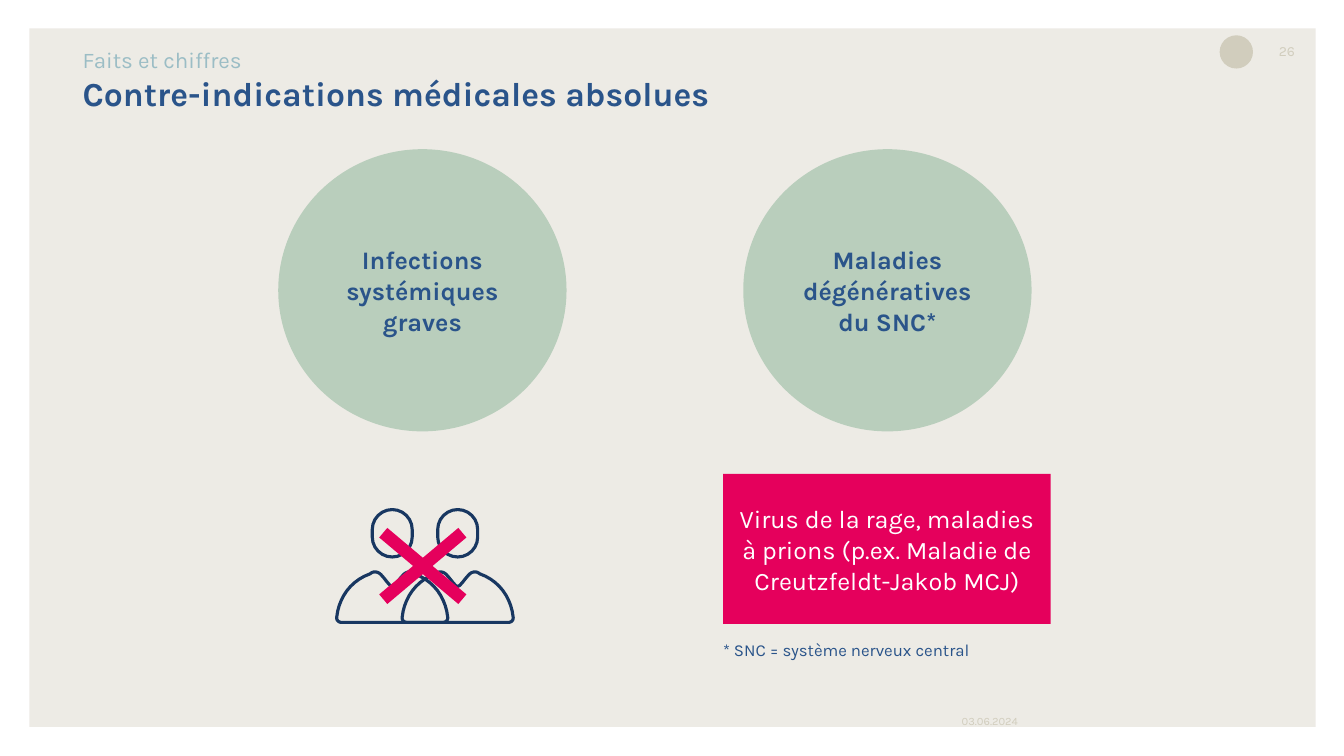
from pptx import Presentation
from pptx.dml.color import RGBColor
from pptx.enum.shapes import MSO_SHAPE as Kind
from pptx.enum.text import MSO_ANCHOR as Anchor, MSO_AUTO_SIZE as Fit, PP_ALIGN as Align
from pptx.util import Inches, Pt

BLUE, NAVY, TEAL = "2A548A", "183761", "9BBDC5"
GREEN, PINK, WHITE = "B9CEBC", "E5005C", "FFFFFF"
SAND, TAUPE = "EDEBE5", "D1CDBD"

# Right half of a bust, from the base to the neckline: the start, then
# Bézier curves, as (shares of the half width, shares of the height).
BASE = (0.91, 1)
CURVES = [
    [(0.97, 1), (1.01, 0.98), (1, 0.95)],
    [(0.96, 0.78), (0.75, 0.63), (0.4, 0.57)],
    [(0.33, 0.54), (0.24, 0.55), (0.18, 0.59)],
    [(0.14, 0.61), (0.1, 0.64), (0.06, 0.66)],
    [(0.03, 0.68), (0, 0.68), (0, 0.68)],
]


def tint(code):
    return RGBColor.from_string(code)


def trace(start, curves, steps=10):
    """Sample a chain of cubic Bézier curves as a list of points."""
    dots = [start]
    for b, c, d in curves:
        a = dots[-1]
        for i in range(1, steps + 1):
            t = i / steps
            s = 1 - t
            dots.append(tuple(
                s**3 * p + 3 * s * s * t * q + 3 * s * t * t * r + t**3 * e
                for p, q, r, e in zip(a, b, c, d)))
    return dots


class Deck:
    """Hold the style and the slide; boxes are in percent of its size."""

    font = "Karla"
    lead = Pt(22)
    stroke = Pt(2.25)

    def __init__(self):
        self.show = Presentation()
        self.wide = self.show.slide_width = Inches(13.33)
        self.high = self.show.slide_height = Inches(7.5)
        self.slide = self.show.slides.add_slide(self.show.slide_layouts[5])
        self.shapes = self.slide.shapes

    def spot(self, x, y):
        return round(x * self.wide / 100), round(y * self.high / 100)

    def box(self, x, y, w, h):
        return self.spot(x, y) + self.spot(w, h)

    def fill_in(self, frame, text, size, color, bold=False):
        frame.word_wrap = True
        frame.text = text
        para = frame.paragraphs[0]
        font = para.font
        font.name, font.size, font.bold = self.font, Pt(size), bold
        font.color.rgb = tint(color)
        return para

    def plain(self, frame, *style):
        """Set left-aligned text from the top edge, without margins."""
        frame.auto_size = Fit.NONE
        frame.vertical_anchor = Anchor.TOP
        frame.margin_left = frame.margin_right = 0
        frame.margin_top = frame.margin_bottom = 0
        self.fill_in(frame, *style).alignment = Align.LEFT

    def title(self, area, text, size, color):
        head = self.shapes.title
        head.left, head.top, head.width, head.height = self.box(*area)
        self.plain(head.text_frame, text, size, color, True)

    def label(self, area, text, size, color):
        note = self.shapes.add_textbox(*self.box(*area))
        self.plain(note.text_frame, text, size, color)

    def shape(self, kind, area, color):
        item = self.shapes.add_shape(kind, *self.box(*area))
        item.shadow.inherit = False
        item.fill.solid()
        item.fill.fore_color.rgb = tint(color)
        item.line.fill.background()
        return item

    def panel(self, area, color):
        """Draw a rectangle behind the title."""
        back = self.shape(Kind.RECTANGLE, area, color)
        self.shapes.title.element.addprevious(back.element)

    def card(self, kind, area, fill, text, color, bold=False):
        frame = self.shape(kind, area, fill).text_frame
        frame.vertical_anchor = Anchor.MIDDLE
        para = self.fill_in(frame, text, 18, color, bold)
        para.alignment = Align.CENTER
        para.line_spacing = self.lead

    def outline(self, item, color):
        item.shadow.inherit = False
        item.fill.background()
        item.line.color.rgb = tint(color)
        item.line.width = self.stroke

    def person(self, x, y, w, h, color):
        half = trace(BASE, CURVES)
        ring = half + [(-u, v) for u, v in reversed(half[:-1])]
        dots = [self.spot(x + w * (1 + u) / 2, y + h * v) for u, v in ring]
        pen = self.shapes.build_freeform(*dots[0])
        pen.add_line_segments(dots[1:], close=True)
        self.outline(pen.convert_to_shape(), color)
        face = self.box(x + 0.32 * w, y, 0.36 * w, 0.42 * h)
        head = self.shapes.add_shape(Kind.ROUNDED_RECTANGLE, *face)
        head.adjustments[0] = 0.5
        self.outline(head, color)

    def cross(self, area, color):
        self.shape(Kind.MATH_MULTIPLY, area, color).adjustments[0] = 0.098


def main():
    deck = Deck()
    deck.panel((2.18, 3.75, 95.72, 92.4), SAND)
    deck.shape(Kind.OVAL, (90.75, 4.67, 2.48, 4.4), TAUPE)
    deck.label((95.15, 5.65, 3, 2.5), "26", 10, TAUPE)
    deck.label((71.55, 94.55, 8, 2), "03.06.2024", 8, TAUPE)

    deck.title((6.15, 9.6, 87.77, 5.87), "Contre-indications médicales absolues", 24, BLUE)
    deck.label((6.15, 6.13, 76.67, 3.33), "Faits et chiffres", 16, TEAL)

    topics = "Infections systémiques graves", "Maladies dégénératives\vdu SNC*"
    for i, text in enumerate(topics):
        area = 20.7 + 34.6 * i, 19.73, 21.45, 37.33
        deck.card(Kind.FLOWCHART_CONNECTOR, area, GREEN, text, BLUE, True)

    deck.card(Kind.RECTANGLE, (53.8, 62.67, 24.38, 19.87), PINK,
              "Virus de la rage, maladies à prions (p.ex. Maladie de "
              "Creutzfeldt-Jakob MCJ)", WHITE)
    for x in (29.93, 25.06):
        deck.person(x, 67.4, 8.25, 14.93, NAVY)
    deck.label((53.8, 84.67, 26.86, 4.53), "* SNC = système nerveux central", 12, BLUE)
    deck.cross((25.8, 66.4, 11.33, 16.93), PINK)
    deck.show.save("out.pptx")


if __name__ == "__main__":
    main()
